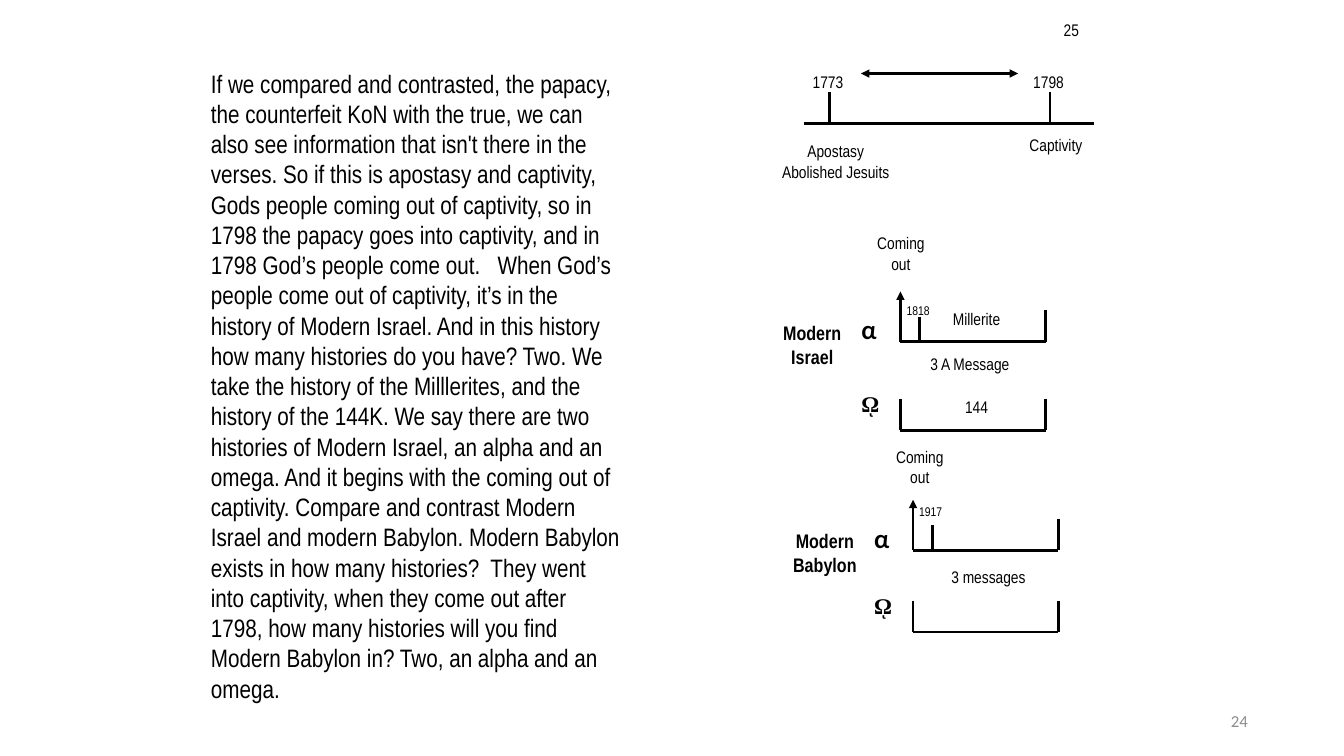
from dataclasses import dataclass

from lxml import etree
from pptx import Presentation
from pptx.dml.color import RGBColor
from pptx.enum.shapes import MSO_CONNECTOR
from pptx.enum.text import MSO_ANCHOR, MSO_AUTO_SIZE, PP_ALIGN
from pptx.oxml.ns import qn
from pptx.util import Inches, Pt

LINE = MSO_CONNECTOR.STRAIGHT
LEFT, MID, RIGHT = PP_ALIGN.LEFT, PP_ALIGN.CENTER, PP_ALIGN.RIGHT
TOP, CENTRE = MSO_ANCHOR.TOP, MSO_ANCHOR.MIDDLE
GROW = MSO_AUTO_SIZE.SHAPE_TO_FIT_TEXT

WIDE, HIGH = Inches(13.33), Inches(7.5)
COLS, ROWS = 160, 90
SPAN, POST = 17.3, 3.75


@dataclass(frozen=True)
class Style:
    font: str
    size: float
    bold: bool = False
    ink: str = "000000"


@dataclass(frozen=True)
class Theme:
    ink: str = "000000"
    line: float = 2
    inset: float = 3
    body: Style = Style("Arial Narrow", 18)
    label: Style = Style("Arial Narrow", 12)
    small: Style = Style("Arial Narrow", 9)
    name: Style = Style("Arial Narrow", 14, True)
    alpha: Style = Style("Lato", 18, True)
    omega: Style = Style("Times New Roman", 16, True)
    page: Style = Style("Calibri", 12, ink="8C8C8C")


THEME = Theme()

STORY = (
    "If we compared and contrasted, the papacy, the counterfeit KoN with the true, "
    "we can also see information that isn't there in the verses.",
    "So if this is apostasy and captivity, Gods people coming out of captivity, so in "
    "1798 the papacy goes into captivity, and in 1798 God’s people come out.  ",
    "When God’s people come out of captivity, it’s in the history of Modern Israel.",
    "And in this history how many histories do you have? Two. We take the history of "
    "the Milllerites, and the history of the 144K.",
    "We say there are two histories of Modern Israel, an alpha and an omega. And it "
    "begins with the coming out of captivity.",
    "Compare and contrast Modern Israel and modern Babylon. Modern Babylon exists in "
    "how many histories? ",
    "They went into captivity, when they come out after 1798, how many histories will "
    "you find Modern Babylon in? Two, an alpha and an omega.",
)


def col(n):
    return round(WIDE * n / COLS)


def row(n):
    return round(HIGH * n / ROWS)


def write(frame, lines, style, align):
    for i, line in enumerate(lines):
        para = frame.paragraphs[0] if i == 0 else frame.add_paragraph()
        para.alignment = align
        run = para.add_run()
        run.text = line
        font = run.font
        font.name, font.size, font.bold = style.font, Pt(style.size), style.bold
        font.color.rgb = RGBColor.from_string(style.ink)


def text(slide, x, y, w, h, lines, style=THEME.label, align=MID, anchor=TOP):
    box = slide.shapes.add_textbox(col(x), row(y), col(w), row(h))
    frame = box.text_frame
    frame.word_wrap = True
    frame.vertical_anchor = anchor
    frame.margin_left = frame.margin_right = Pt(THEME.inset)
    frame.margin_top = frame.margin_bottom = Pt(THEME.inset)
    write(frame, lines, style, align)


def rule(slide, x1, y1, x2, y2, heads=()):
    link = slide.shapes.add_connector(LINE, col(x1), row(y1), col(x2), row(y2))
    link.line.color.rgb = RGBColor.from_string(THEME.ink)
    link.line.width = Pt(THEME.line)
    stroke = link._element.spPr.find(qn("a:ln"))
    for end in heads:
        etree.SubElement(stroke, qn(f"a:{end}"), type="triangle")
    etree.SubElement(link._element.spPr, qn("a:effectLst"))


def story(slide):
    body = slide.placeholders[1]
    body.left, body.top = col(23.9), row(7.5)
    body.width, body.height = col(51.5), row(78.25)
    frame = body.text_frame
    frame.word_wrap = True
    frame.auto_size = GROW
    write(frame, [" ".join(STORY)], THEME.body, LEFT)
    para = frame.paragraphs[0]
    para.space_before = Pt(0)
    props = para._p.get_or_add_pPr()
    props.set("marL", "0")
    props.set("indent", "0")
    etree.SubElement(props, qn("a:buNone"))


def dates(slide):
    base = 14.75
    rule(slide, 95.75, base, 130.2, base)
    for x, year in ((98.75, "1773"), (125, "1798")):
        rule(slide, x, base - POST, x, base)
        text(slide, x - 3, 8, 5.65, 3.4, [year])
    rule(slide, 102.5, 8.75, 121.2, 8.75, ("headEnd", "tailEnd"))
    text(slide, 92, 16.3, 15, 6, ["Apostasy", "Abolished Jesuits"])
    text(slide, 121.2, 15.5, 9, 3.7, ["Captivity"])


def trough(slide, x, base, label):
    rule(slide, x, base, x + SPAN, base)
    for side in (x, x + SPAN):
        rule(slide, side, base - POST, side, base)
    if label:
        text(slide, x + 4.55, base - 4.5, 9, 3.7, [label])


def era(slide, x, base, low, name, year, labels, note, exit_at, year_up, note_at):
    trough(slide, x, base, labels[0])
    trough(slide, x, low, labels[1])
    text(slide, x - 15, base - 3, 9, 8.3, ["Modern", name], THEME.name)
    text(slide, x - 5.15, base - POST, 3.75, POST, ["α"], THEME.alpha, LEFT)
    text(slide, x - 5.15, low - 5.3, 3.75, 6.7, ["ῼ"], THEME.omega, LEFT)
    rule(slide, x, base - POST, x, base - 6, ("tailEnd",))
    rule(slide, x + 2.3, base - 3, x + 2.3, base)
    text(slide, x, base - year_up, 4.2, 2.9, [year], THEME.small)
    text(slide, x + exit_at[0], base + exit_at[1], 9, 6.7, ["Coming out"])
    text(slide, x + note_at[0], base + note_at[1], 16.55, 3.7, [note])


def main():
    deck = Presentation()
    deck.slide_width, deck.slide_height = WIDE, HIGH
    slide = deck.slides.add_slide(deck.slide_layouts[1])
    title = slide.shapes.title._element
    title.getparent().remove(title)
    story(slide)
    dates(slide)
    era(slide, 107.2, 40.7, 51.25, "Israel", "1818", ("Millerite", "144"),
        "3 A Message", (-4.45, -13.45), 5.15, (0, 0.85))
    era(slide, 108.7, 65.5, 75.25, "Babylon", "1917", ("", ""),
        "3 messages", (-3.7, -12.85), 6, (0.7, 1.45))
    text(slide, 124.2, 1.8, 6.7, 3.4, ["25"])
    text(slide, 113.05, 83.4, 36, 4.8, ["24"], THEME.page, RIGHT, CENTRE)
    deck.save("out.pptx")


if __name__ == "__main__":
    main()
